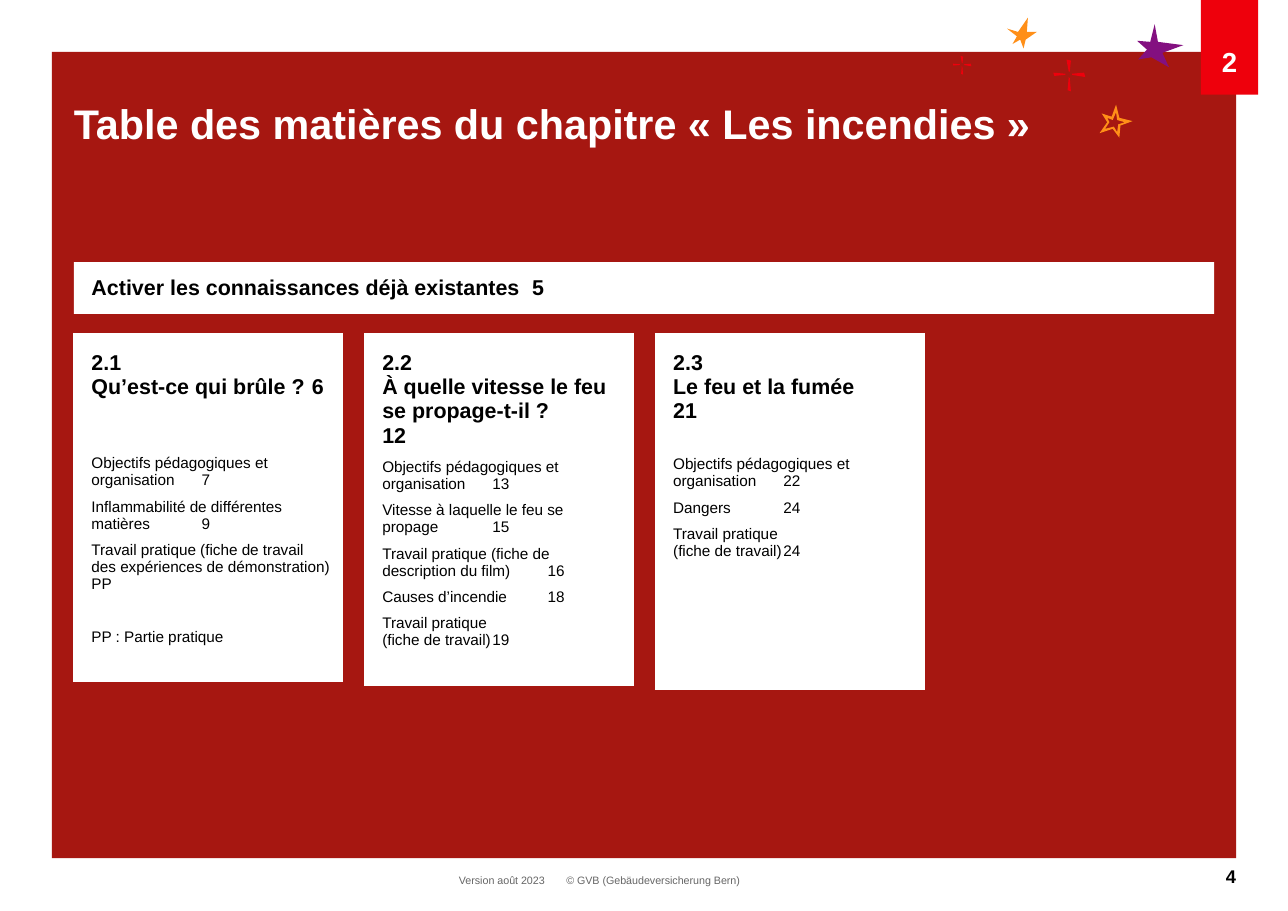
import pptx
import pptx.dml.color
import pptx.enum.shapes
import pptx.enum.text
import pptx.oxml
import pptx.oxml.ns
import pptx.util
from dataclasses import dataclass
from typing import Any

Inches = pptx.util.Inches
Pt = pptx.util.Pt
RGBColor = pptx.dml.color.RGBColor
ALIGN = pptx.enum.text.PP_ALIGN
ANCHOR = pptx.enum.text.MSO_ANCHOR

WHITE = RGBColor(0xFF, 0xFF, 0xFF)
BLACK = RGBColor(0x00, 0x00, 0x00)
GREY = RGBColor(0x66, 0x66, 0x66)
DARK_RED = RGBColor(0xA6, 0x17, 0x11)
RED = RGBColor(0xEE, 0x00, 0x0C)
PURPLE = RGBColor(0x83, 0x10, 0x80)
ORANGE = RGBColor(0xFF, 0x8F, 0x18)

Outline = list[tuple[float, float]]


@dataclass
class Style:
    size: float
    color: RGBColor = BLACK
    bold: bool = False
    align: Any = ALIGN.LEFT
    tabs: tuple[float, ...] = ()
    after: float = 0


@dataclass
class Star:
    color: RGBColor
    outlines: list[Outline]


@dataclass
class Cross:
    x: float
    y: float
    scale: float


@dataclass
class Section:
    heading: str
    entries: list[str]
    note: str = ""
    rows: tuple[float, float] = (1.05, 2.11)


STARS = [
    Star(PURPLE, [[(10.44, 0.38), (10.32, 0.37), (10.41, 0.45), (10.33, 0.54), (10.45, 0.52),
                   (10.61, 0.61), (10.55, 0.48), (10.74, 0.41), (10.51, 0.38), (10.48, 0.22)]]),
    Star(ORANGE, [[(9.19, 0.4), (9.26, 0.36), (9.29, 0.44), (9.31, 0.36), (9.41, 0.29),
                   (9.32, 0.29), (9.33, 0.16), (9.24, 0.29), (9.14, 0.26), (9.23, 0.33)]]),
    Star(ORANGE, [[(10.16, 1.25), (10.1, 1.17), (9.98, 1.21), (10.05, 1.11), (10, 1.03),
                   (10.09, 1.06), (10.13, 0.95), (10.16, 1.07), (10.28, 1.1), (10.17, 1.14)],
                  [(10.11, 1.15), (10.14, 1.2), (10.15, 1.13), (10.21, 1.11), (10.14, 1.09),
                   (10.13, 1.02), (10.1, 1.09), (10.05, 1.07), (10.07, 1.11), (10.03, 1.17)]]),
]

# Arms of a cross, measured from its centre
CROSS_ARMS: list[Outline] = [
    [(0, -0.03), (-0.02, -0.14), (0.02, -0.13), (0.01, -0.03)],
    [(0.01, 0.03), (0.02, 0.15), (-0.01, 0.14), (0, 0.02)],
    [(0.03, -0.01), (0.14, -0.02), (0.15, 0.02), (0.03, 0)],
    [(-0.03, 0), (-0.13, 0.01), (-0.14, -0.02), (-0.03, -0.01)],
]
CROSSES = [Cross(9.7, 0.68, 1), Cross(8.73, 0.59, 0.58)]

SECTIONS = [
    Section("2.1\vQu’est-ce qui brûle ?\t6",
            ["Objectifs pédagogiques et organisation\t7",
             "Inflammabilité de différentes matières\t9",
             "Travail pratique (fiche de travail des expériences de démonstration)\tPP"],
            note="PP : Partie pratique"),
    Section("2.2\vÀ quelle vitesse le feu se propage-t-il ?\t12",
            ["Objectifs pédagogiques et organisation\t13",
             "Vitesse à laquelle le feu se propage\t15",
             "Travail pratique (fiche de description du film)\t16",
             "Causes d’incendie\t18",
             "Travail pratique\v(fiche de travail)\t19"]),
    Section("2.3\vLe feu et la fumée\t21",
            ["Objectifs pédagogiques et organisation\t22",
             "Dangers\t24",
             "Travail pratique\v(fiche de travail)\t24"],
            rows=(1.06, 2.17)),
]
COLUMN_LEFT, COLUMN_TOP, COLUMN_WIDTH, COLUMN_STEP = 0.67, 3.03, 2.44, 2.64
PAGE_TABS = (0.88, 1.75)


def fill_text(frame: Any, lines: list[str], style: Style) -> None:
    for index, line in enumerate(lines):
        para = frame.paragraphs[0] if index == 0 else frame.add_paragraph()
        para.text = line
        properties = para._p.get_or_add_pPr()
        properties.set("marL", "0")
        properties.set("indent", "0")
        pptx.oxml.ns.qn("a:buNone")
        properties.append(properties.makeelement(pptx.oxml.ns.qn("a:buNone"), {}))
        if style.tabs:
            stops = properties.makeelement(pptx.oxml.ns.qn("a:tabLst"), {})
            for stop in style.tabs:
                attributes = {"pos": str(Inches(stop)), "algn": "l"}
                stops.append(stops.makeelement(pptx.oxml.ns.qn("a:tab"), attributes))
            properties.append(stops)
        para.alignment = style.align
        para.space_before = Pt(0)
        para.space_after = Pt(style.after)
        for span in para.runs:
            span.font.name = "Arial"
            span.font.size = Pt(style.size)
            span.font.bold = style.bold
            span.font.color.rgb = style.color


def set_margins(target: Any, left: float, top: float, right: float, bottom: float) -> None:
    target.margin_left, target.margin_top = Inches(left), Inches(top)
    target.margin_right, target.margin_bottom = Inches(right), Inches(bottom)


def place_text(box: Any, at: tuple[float, ...], text: str, style: Style,
               margins: tuple[float, ...] = (0, 0, 0, 0), anchor: Any = ANCHOR.TOP) -> None:
    box.left, box.top, box.width, box.height = (Inches(length) for length in at)
    frame = box.text_frame
    frame.word_wrap = True
    frame.auto_size = pptx.enum.text.MSO_AUTO_SIZE.NONE
    frame.vertical_anchor = anchor
    set_margins(frame, *margins)
    fill_text(frame, [text], style)


def paint(shape: Any, color: RGBColor) -> None:
    shape.shadow.inherit = False
    shape.fill.solid()
    shape.fill.fore_color.rgb = color
    shape.line.fill.background()


def draw_outlines(shapes: Any, outlines: list[Outline], color: RGBColor) -> None:
    contours = [[(Inches(x), Inches(y)) for x, y in outline] for outline in outlines]
    builder = shapes.build_freeform(*contours[0][0])
    for index, contour in enumerate(contours):
        if index:
            builder.move_to(*contour[0])
        builder.add_line_segments(contour[1:], close=True)
    paint(builder.convert_to_shape(), color)


def draw_cross(shapes: Any, cross: Cross) -> None:
    group = shapes.add_group_shape()
    for arm in CROSS_ARMS:
        outline = [(cross.x + cross.scale * x, cross.y + cross.scale * y) for x, y in arm]
        draw_outlines(group.shapes, [outline], RED)


def draw_section(shapes: Any, section: Section, left: float) -> None:
    table = shapes.add_table(2, 1, Inches(left), Inches(COLUMN_TOP), Inches(COLUMN_WIDTH),
                             Inches(sum(section.rows))).table
    table.first_row = table.horz_banding = False
    for row, height in zip(table.rows, section.rows):
        row.height = Inches(height)
    heading, body = table.cell(0, 0), table.cell(1, 0)
    for cell, top in ((heading, 0.16), (body, 0.05)):
        cell.fill.solid()
        cell.fill.fore_color.rgb = WHITE
        set_margins(cell, 0.16, top, 0.1, 0.05)
    fill_text(heading.text_frame, [section.heading], Style(14, bold=True, tabs=PAGE_TABS))
    lines = section.entries + ([section.note] if section.note else [])
    fill_text(body.text_frame, lines, Style(10, tabs=PAGE_TABS, after=6))
    if section.note:
        body.text_frame.paragraphs[-1].space_before = Pt(17.5)


def main() -> None:
    deck = pptx.Presentation()
    deck.slide_width, deck.slide_height = Inches(11.69), Inches(8.27)
    page = deck.slides.add_slide(deck.slide_layouts[3])
    shapes = page.shapes
    title, chapter, banner = list(page.placeholders)

    # Red panel and stars
    panel = shapes.add_shape(pptx.enum.shapes.MSO_SHAPE.RECTANGLE, Inches(0.47), Inches(0.47),
                             Inches(10.75), Inches(7.32))
    paint(panel, DARK_RED)
    for star in STARS:
        draw_outlines(shapes, star.outlines, star.color)
    for cross in CROSSES:
        draw_cross(shapes, cross)

    # Chapter tab, title and banner, raised above the panel
    for placeholder in (chapter, title, banner):
        shapes.element.append(placeholder.element)
    for placeholder, color in ((chapter, RED), (banner, WHITE)):
        placeholder.fill.solid()
        placeholder.fill.fore_color.rgb = color
    place_text(chapter, (10.9, 0, 0.52, 0.86), "2", Style(18, WHITE, True, ALIGN.CENTER),
               (0, 0.4, 0, 0.15), ANCHOR.BOTTOM)
    place_text(title, (0.67, 0.85, 8.72, 0.58), "Table des matières du chapitre « Les incendies »",
               Style(27, WHITE, True), (0, 0.04, 0, 0))
    place_text(banner, (0.67, 2.38, 10.35, 0.47), "Activer les connaissances déjà existantes\t5",
               Style(14, bold=True, tabs=(9.64,)), (0.16, 0, 0, 0.02), ANCHOR.MIDDLE)

    # Sections
    for index, section in enumerate(SECTIONS):
        draw_section(shapes, section, COLUMN_LEFT + index * COLUMN_STEP)

    # Footer
    for at, text, style in (
        ((4.13, 7.93, 0.85, 0.13), "Version août 2023", Style(7, GREY, align=ALIGN.CENTER)),
        ((5.14, 7.93, 1.62, 0.12), "© GVB (Gebäudeversicherung Bern)", Style(7, GREY)),
        ((10.51, 7.85, 0.71, 0.17), "4", Style(12, bold=True, align=ALIGN.RIGHT)),
    ):
        place_text(shapes.add_textbox(0, 0, 0, 0), at, text, style)

    deck.save("out.pptx")


if __name__ == "__main__":
    main()
